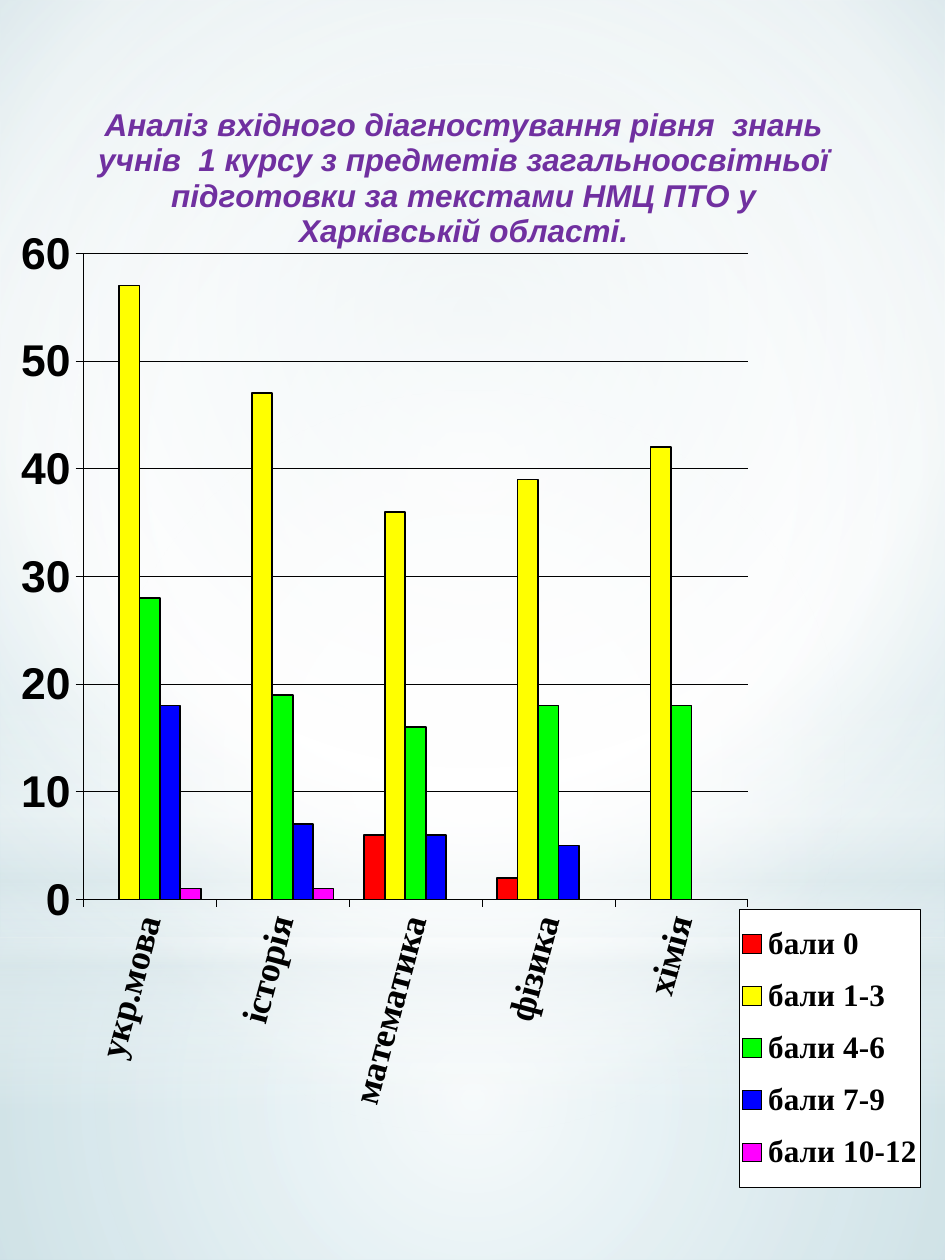
from dataclasses import dataclass

from pptx import Presentation
from pptx.chart.data import CategoryChartData
from pptx.dml.color import RGBColor
from pptx.enum.chart import XL_AXIS_CROSSES as Crosses
from pptx.enum.chart import XL_CHART_TYPE as ChartType
from pptx.enum.chart import XL_LEGEND_POSITION as LegendPos
from pptx.enum.chart import XL_TICK_LABEL_POSITION as LabelPos
from pptx.enum.chart import XL_TICK_MARK as Tick
from pptx.enum.shapes import MSO_SHAPE as Shape
from pptx.enum.text import PP_ALIGN as Align
from pptx.oxml import parse_xml
from pptx.oxml.ns import nsdecls, qn
from pptx.util import Pt

TITLE = ("Аналіз вхідного діагностування рівня  знань учнів  1 курсу "
         "з предметів загальноосвітньої підготовки за текстами "
         "НМЦ ПТО у Харківській області.")
SUBJECTS = ["укр.мова", "історія", "математика", "фізика", "хімія"]
SCORES = {
    "бали 0": ("FF0000", (0, 0, 6, 2, 0)),
    "бали 1-3": ("FFFF00", (57, 47, 36, 39, 42)),
    "бали 4-6": ("00FF00", (28, 19, 16, 18, 18)),
    "бали 7-9": ("0000FF", (18, 7, 6, 5, 0)),
    "бали 10-12": ("FF00FF", (1, 1, 0, 0, 0)),
}


@dataclass(frozen=True)
class Theme:
    ink: str = "000000"
    accent: str = "7030A0"
    white: str = "FFFFFF"
    mist: str = "DDE9EC"
    pale: str = "D0E2E6"
    teal: str = "9BC8D4"
    sans: str = "Arial"
    serif: str = "Times New Roman"
    title: float = 18
    base: float = 24.2
    subject: float = 20.6
    value: float = 25.4
    legend: float = 17.8
    hairline: float = 0.25
    outline: float = 0.97


def set_font(font, size, color, name, bold=True, italic=False):
    font.size, font.name, font.bold, font.italic = Pt(size), name, bold, italic
    font.color.rgb = RGBColor.from_string(color)


def put_text(tf, text, **fmt):
    p = tf.paragraphs[0]
    p.alignment = Align.CENTER
    r = p.add_run()
    r.text = text
    set_font(r.font, **fmt)


def set_line(line, color, width):
    line.color.rgb = RGBColor.from_string(color)
    line.width = Pt(width)


def set_gradient(parent, stops, center=(50, 50, 50, 50), angle=None):
    gs = "".join(
        f'<a:gs pos="{pos * 1000}"><a:srgbClr val="{color}">'
        f'<a:alpha val="{alpha * 1000}"/></a:srgbClr></a:gs>'
        for pos, color, alpha in stops)
    if angle is None:
        sides = " ".join(f'{k}="{v * 1000}"' for k, v in zip("ltrb", center))
        shade = f'<a:path path="circle"><a:fillToRect {sides}/></a:path>'
    else:
        shade = f'<a:lin ang="{angle * 60000}" scaled="0"/>'
    grad = parse_xml(f'<a:gradFill {nsdecls("a")} rotWithShape="1">'
                     f'<a:gsLst>{gs}</a:gsLst>{shade}</a:gradFill>')
    parent.replace(parent.find(qn("a:solidFill")), grad)


def set_layout(parent, index, inner=False, **box):
    old = parent.find(qn("c:layout"))
    if old is not None:
        parent.remove(old)
    target = '<c:layoutTarget val="inner"/>' if inner else ""
    modes = "".join(f'<c:{k}Mode val="edge"/>' for k in box if k in "xy")
    sizes = "".join(f'<c:{k} val="{v}"/>' for k, v in box.items())
    parent.insert(index, parse_xml(
        f'<c:layout {nsdecls("c")}><c:manualLayout>{target}{modes}{sizes}'
        '</c:manualLayout></c:layout>'))


def area_format(content):
    return parse_xml(f'<c:spPr {nsdecls("c", "a")}>{content}</c:spPr>')


class Painter:
    def __init__(self, s, theme):
        self.s, self.t = s, theme

    def background(self, stops, center):
        self.s.background.fill.solid()
        set_gradient(self.s._element.xpath(".//p:bgPr")[0], stops, center)

    def glow(self, kind, y, height, stops, angle=None):
        sp = self.s.shapes.add_shape(kind, 0, Pt(y), Pt(540), Pt(height))
        sp.shadow.inherit = False
        sp.line.fill.background()
        sp.fill.solid()
        set_gradient(sp._element.spPr, stops, angle=angle)

    def chart(self, x, y, w, h):
        t = self.t
        data = CategoryChartData()
        data.categories = SUBJECTS
        for name, (_, values) in SCORES.items():
            data.add_series(name, values)
        chart = self.s.shapes.add_chart(
            ChartType.COLUMN_CLUSTERED, Pt(x), Pt(y), Pt(w), Pt(h), data).chart
        set_font(chart.font, t.base, t.ink, t.sans)
        space = chart._chartSpace
        space.find(qn("c:txPr")).addprevious(area_format("<a:noFill/>"))
        plot_area = space.chart.plotArea
        set_layout(plot_area, 0, inner=True, x=0.09, y=0.21, w=0.709, h=0.541)
        plot_area.append(area_format("<a:noFill/>"))
        plot = chart.plots[0]
        plot.gap_width, plot.overlap, plot.vary_by_categories = 150, 0, False
        for series, (color, _) in zip(plot.series, SCORES.values()):
            series.invert_if_negative = False
            series.format.fill.solid()
            series.format.fill.fore_color.rgb = RGBColor.from_string(color)
            set_line(series.format.line, t.ink, t.outline)
        self.axes(chart)
        self.title(chart)
        self.legend(chart)

    def axes(self, chart):
        t = self.t
        cat, val = chart.category_axis, chart.value_axis
        for axis, size, name in ((cat, t.subject, t.serif), (val, t.value, t.sans)):
            set_font(axis.tick_labels.font, size, t.ink, name)
            set_line(axis.format.line, t.ink, t.hairline)
            axis.major_tick_mark, axis.minor_tick_mark = Tick.OUTSIDE, Tick.NONE
        cat.tick_label_position = LabelPos.LOW
        cat.crosses = Crosses.MAXIMUM
        body = cat._element.find(qn("c:txPr")).find(qn("a:bodyPr"))
        body.set("rot", str(-75 * 60000))
        body.set("vert", "horz")
        val.minimum_scale, val.maximum_scale, val.major_unit = 0, 60, 10
        val.has_major_gridlines = True
        set_line(val.major_gridlines.format.line, t.ink, t.hairline)

    def title(self, chart):
        t = self.t
        chart.has_title = True
        title = chart.chart_title
        put_text(title.text_frame, TITLE, size=t.title, color=t.accent,
                 name=t.sans, italic=True)
        title.include_in_layout = False
        set_layout(title._element, 1, x=0.1, y=0.08)

    def legend(self, chart):
        t = self.t
        chart.has_legend = True
        legend = chart.legend
        legend.position = LegendPos.RIGHT
        legend.include_in_layout = False
        set_font(legend.font, t.legend, t.ink, t.serif)
        set_layout(legend._element, 1, x=0.79, y=0.759, w=0.193, h=0.233)
        legend._element.find(qn("c:txPr")).addprevious(area_format(
            f'<a:solidFill><a:srgbClr val="{t.white}"/></a:solidFill>'
            f'<a:ln w="{Pt(t.hairline)}"><a:solidFill><a:srgbClr val="{t.ink}"/>'
            '</a:solidFill></a:ln>'))


def main():
    prs = Presentation()
    prs.slide_width, prs.slide_height = Pt(540), Pt(720)
    t = Theme()
    s = Painter(prs.slides.add_slide(prs.slide_layouts[6]), t)
    s.background([(0, t.pale, 100), (60, t.white, 100), (100, t.teal, 100)],
                 (20, 10, 20, 60))
    s.glow(Shape.RECTANGLE, 535.7, 184.3,
           [(0, t.white, 91), (37, t.white, 76), (100, t.mist, 79)])
    s.glow(Shape.RECTANGLE, 0, 535.7,
           [(0, t.white, 89), (48, t.white, 62), (100, t.mist, 79)])
    s.glow(Shape.RECTANGLE, 395.3, 239.8,
           [(0, t.white, 0), (29, t.white, 30), (45, t.mist, 40),
            (55, t.white, 26), (65, t.mist, 60), (100, t.white, 0)], angle=90)
    s.glow(Shape.OVAL, 167.8, 535.7, [(0, t.white, 100), (56, t.white, 0)])
    s.chart(-0.7, 1.4, 535.7, 682.6)
    prs.save("out.pptx")


if __name__ == "__main__":
    main()
